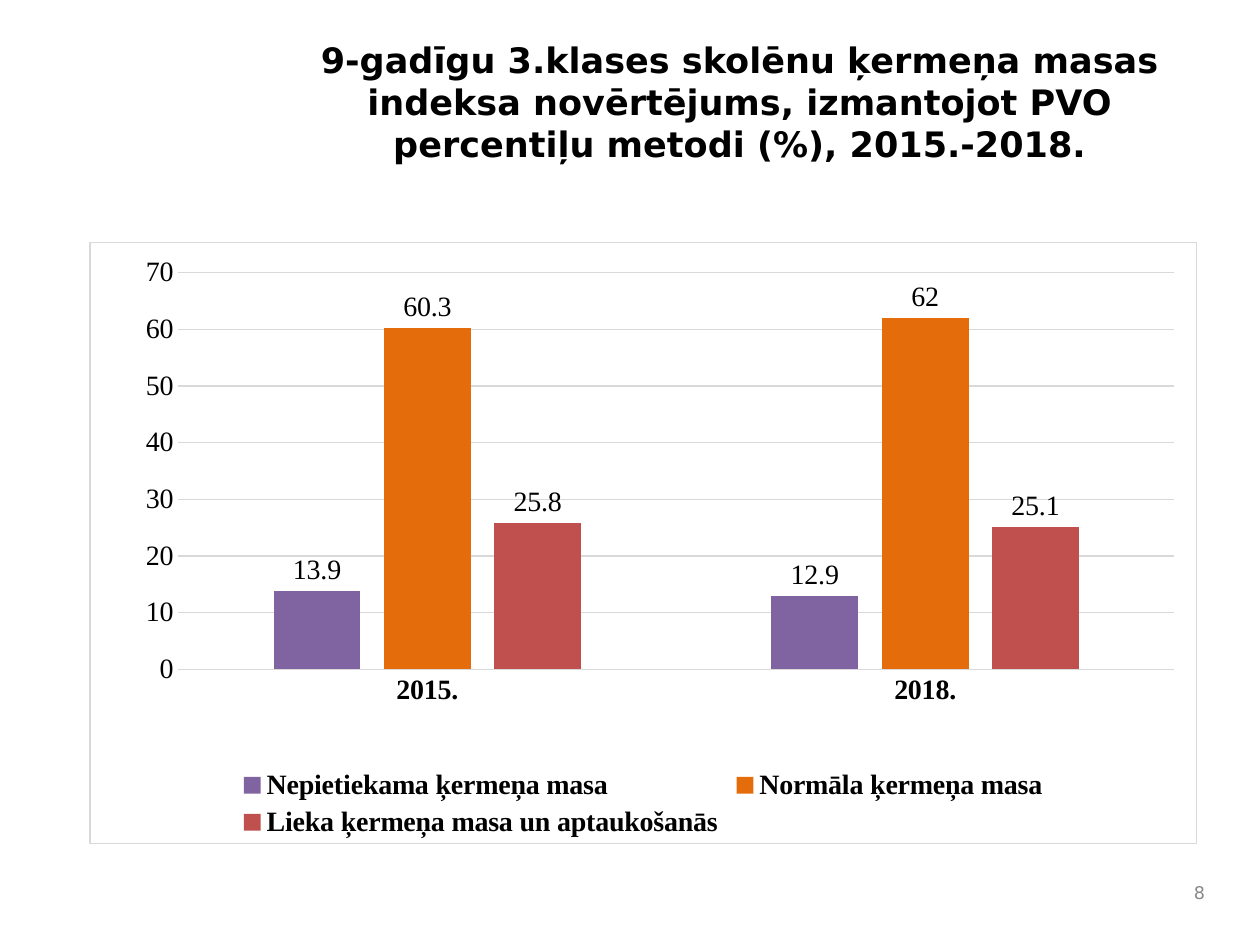
from lxml import etree
from pptx import Presentation
from pptx.chart.data import CategoryChartData
from pptx.dml.color import RGBColor
from pptx.enum.chart import XL_CHART_TYPE, XL_LABEL_POSITION, XL_LEGEND_POSITION, XL_TICK_MARK
from pptx.enum.text import MSO_ANCHOR, PP_ALIGN
from pptx.oxml import parse_xml
from pptx.oxml.ns import nsdecls, qn
from pptx.util import Cm, Pt

COLUMNS = XL_CHART_TYPE.COLUMN_CLUSTERED
OUTSIDE_END = XL_LABEL_POSITION.OUTSIDE_END
LEGEND_BOTTOM = XL_LEGEND_POSITION.BOTTOM
NO_TICK = XL_TICK_MARK.NONE
TOP, MIDDLE = MSO_ANCHOR.TOP, MSO_ANCHOR.MIDDLE
CENTER, RIGHT = PP_ALIGN.CENTER, PP_ALIGN.RIGHT

BLACK = RGBColor(0x00, 0x00, 0x00)
GRAY = RGBColor(0x89, 0x89, 0x89)
LIGHT_GRAY = RGBColor(0xD9, 0xD9, 0xD9)
PURPLE = RGBColor(0x80, 0x64, 0xA2)
ORANGE = RGBColor(0xE4, 0x6C, 0x0A)
RED = RGBColor(0xC0, 0x50, 0x4D)

TITLE_FONT = {"name": "DejaVu Sans", "size": Pt(20), "bold": True}
NUMBER_FONT = {"name": "DejaVu Sans", "size": Pt(10), "bold": False}
CHART_FONT = {"name": "Times New Roman", "size": Pt(16), "bold": False}
CHART_BOLD = {**CHART_FONT, "bold": True}

YEARS = ["2015.", "2018."]
BODY_MASS_SERIES = [
    ("Nepietiekama ķermeņa masa", (13.9, 12.9), PURPLE),
    ("Normāla ķermeņa masa", (60.3, 62), ORANGE),
    ("Lieka ķermeņa masa un aptaukošanās", (25.8, 25.1), RED),
]
PLOT_LAYOUT = {"x": 0.08, "y": 0.05, "w": 0.9, "h": 0.66}


def set_values(target, values):
    for name, value in values.items():
        setattr(target, name, value)


def format_font(font, values, color=BLACK):
    set_values(font, values)
    font.color.rgb = color


def format_line(line):
    line.color.rgb = LIGHT_GRAY
    line.width = Pt(0.75)


class SlideBuilder:
    def __init__(self, presentation):
        title_only = presentation.slide_layouts[5]
        self.slide = presentation.slides.add_slide(title_only)

    def fill_text(self, shape, text, font, color, alignment, anchor):
        frame = shape.text_frame
        set_values(frame, {"word_wrap": True, "vertical_anchor": anchor})
        paragraph = frame.paragraphs[0]
        paragraph.text = text
        paragraph.alignment = alignment
        format_font(paragraph.runs[0].font, font, color)

    def title(self, text, left, top, width, height):
        shape = self.slide.shapes.title
        set_values(shape, {"left": left, "top": top, "width": width, "height": height})
        self.fill_text(shape, text, TITLE_FONT, BLACK, CENTER, TOP)

    def page_number(self, text, left, top, width, height):
        shape = self.slide.shapes.add_textbox(left, top, width, height)
        self.fill_text(shape, text, NUMBER_FONT, GRAY, RIGHT, MIDDLE)

    def column_chart(self, categories, series_rows, left, top, width, height):
        data = CategoryChartData()
        data.categories = categories
        for name, values, _ in series_rows:
            data.add_series(name, values)
        frame = self.slide.shapes.add_chart(COLUMNS, left, top, width, height, data)
        chart = frame.chart
        chart.has_title = False
        format_font(chart.font, CHART_FONT)

        plot = chart.plots[0]
        set_values(plot, {"gap_width": 219, "overlap": -27,
                          "vary_by_categories": False, "has_data_labels": True})
        set_values(plot.data_labels, {"show_value": True, "position": OUTSIDE_END})
        format_font(plot.data_labels.font, CHART_FONT)
        for series, (_, _, color) in zip(plot.series, series_rows):
            series.format.fill.solid()
            series.format.fill.fore_color.rgb = color

        self.format_axes(chart)
        chart.has_legend = True
        set_values(chart.legend, {"position": LEGEND_BOTTOM, "include_in_layout": False})
        format_font(chart.legend.font, CHART_BOLD)
        self.place_plot(chart)
        self.add_chart_border(chart)

    def format_axes(self, chart):
        for axis, font in ((chart.category_axis, CHART_BOLD), (chart.value_axis, CHART_FONT)):
            set_values(axis, {"major_tick_mark": NO_TICK, "minor_tick_mark": NO_TICK})
            format_font(axis.tick_labels.font, font)
        format_line(chart.category_axis.format.line)
        value_axis = chart.value_axis
        set_values(value_axis, {"minimum_scale": 0, "maximum_scale": 70, "major_unit": 10})
        value_axis.format.line.fill.background()
        format_line(value_axis.major_gridlines.format.line)

    def place_plot(self, chart):
        """Fix the inner plot area as fractions of the chart frame."""
        plot_area = chart.plots[0]._element.getparent()
        for old_layout in plot_area.findall(qn("c:layout")):
            plot_area.remove(old_layout)
        layout = parse_xml(f"<c:layout {nsdecls('c')}><c:manualLayout/></c:layout>")
        settings = {"layoutTarget": "inner", "xMode": "edge", "yMode": "edge", **PLOT_LAYOUT}
        for tag, value in settings.items():
            etree.SubElement(layout[0], qn(f"c:{tag}")).set("val", str(value))
        plot_area.insert(0, layout)

    def add_chart_border(self, chart):
        border = parse_xml(
            f"<c:spPr {nsdecls('c', 'a')}><a:noFill/><a:ln w=\"{Pt(0.75)}\"><a:solidFill>"
            f"<a:srgbClr val=\"{LIGHT_GRAY}\"/></a:solidFill></a:ln></c:spPr>")
        chart._chartSpace.find(qn("c:chart")).addnext(border)


def main():
    presentation = Presentation()
    set_values(presentation, {"slide_width": Cm(25.4), "slide_height": Cm(19.05)})
    builder = SlideBuilder(presentation)
    builder.title(
        "9-gadīgu 3.klases skolēnu ķermeņa masas indeksa novērtējums, "
        "izmantojot PVO percentiļu metodi (%), 2015.-2018.",
        Cm(5.7), Cm(0.64), Cm(18.43), Cm(3.3))
    builder.page_number("8", Cm(23.7), Cm(17.58), Cm(0.84), Cm(0.84))
    builder.column_chart(YEARS, BODY_MASS_SERIES, Cm(1.8), Cm(4.88), Cm(22.33), Cm(12.14))
    presentation.save("out.pptx")


if __name__ == "__main__":
    main()
